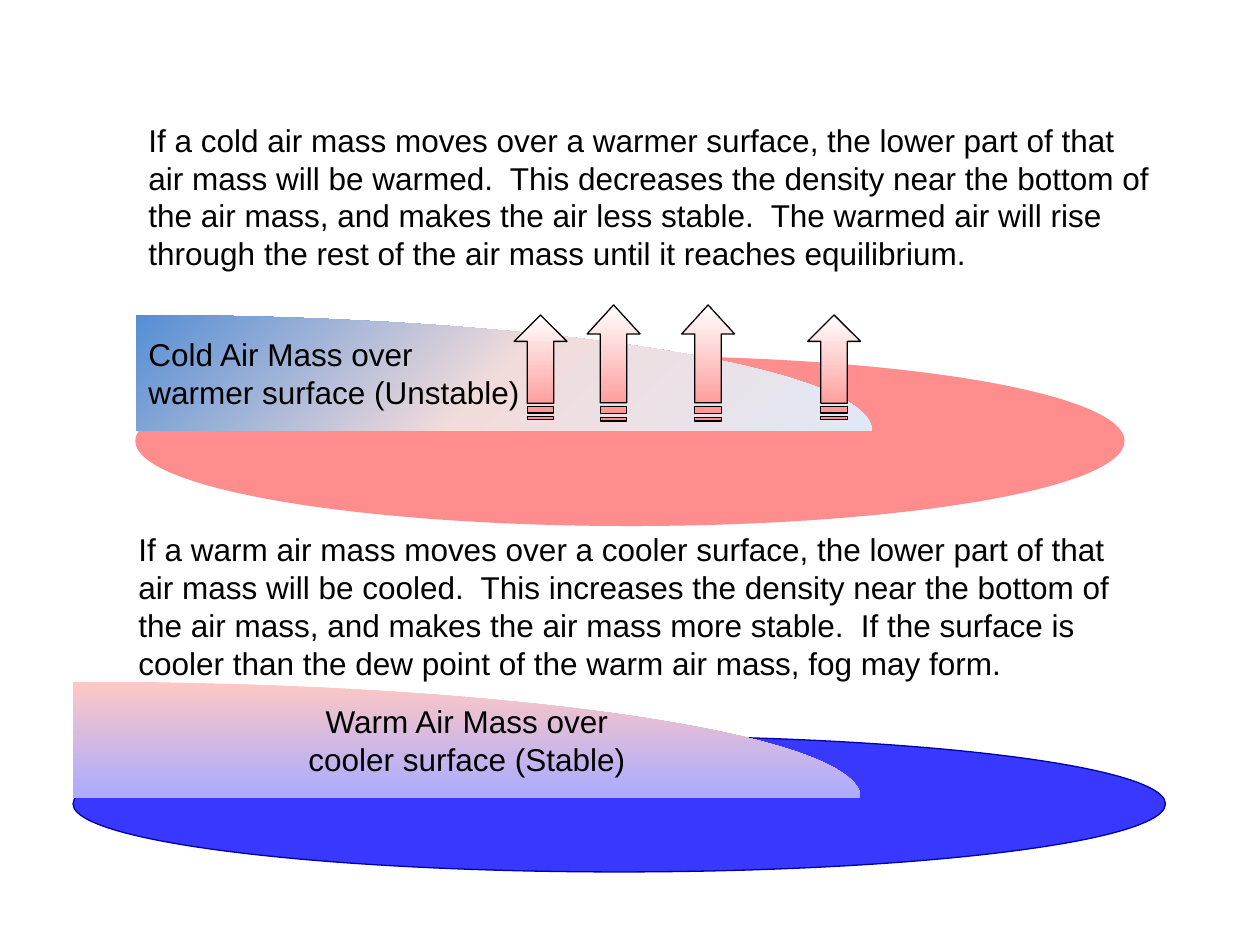
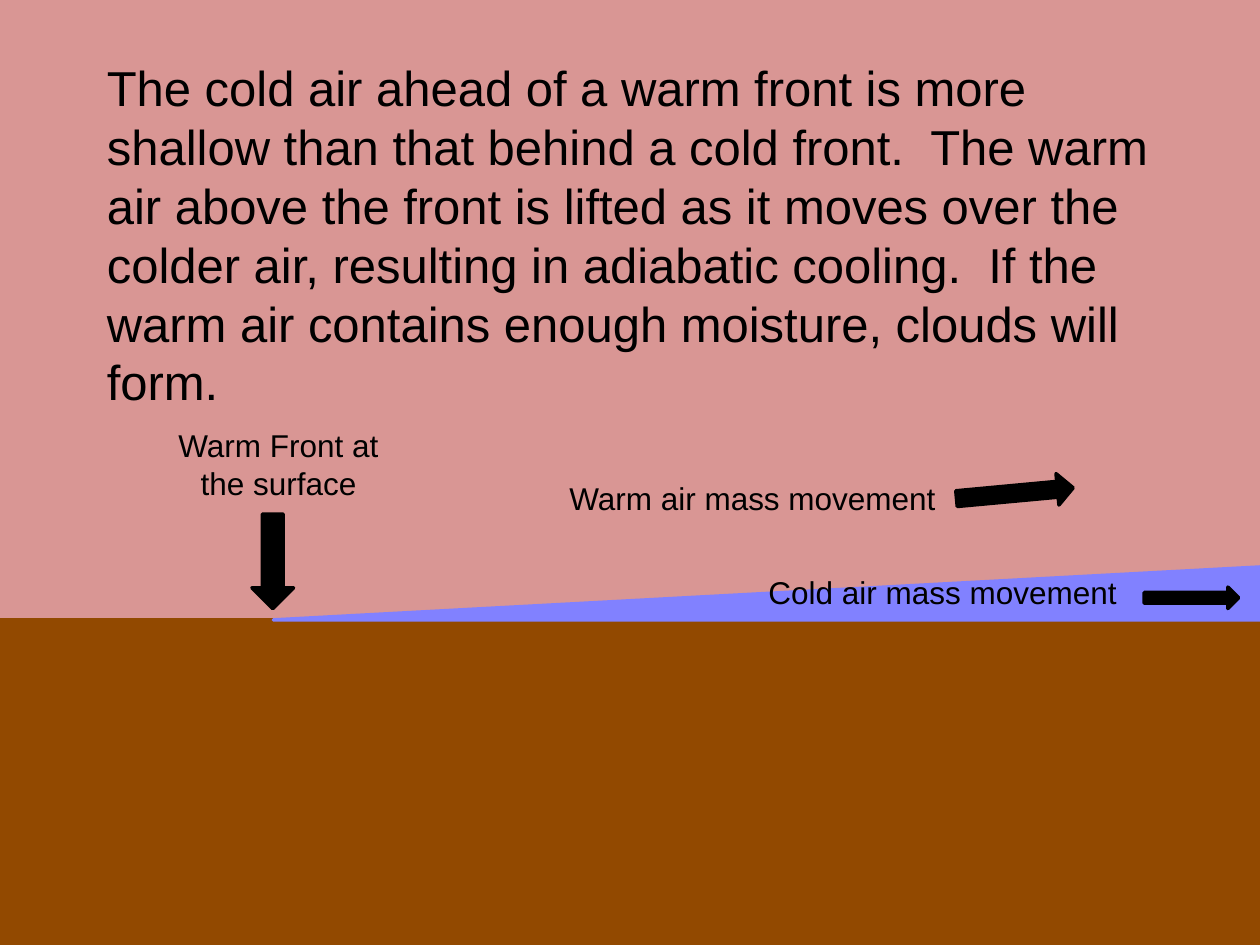
import math
from dataclasses import dataclass

import pptx
import pptx.dml.color
import pptx.enum.shapes
import pptx.enum.text
import pptx.oxml
import pptx.oxml.ns
import pptx.presentation
import pptx.shapes.autoshape
import pptx.slide
import pptx.text.text
import pptx.util

Inches = pptx.util.Inches
Pt = pptx.util.Pt
Preset = pptx.enum.shapes.MSO_SHAPE
Align = pptx.enum.text.PP_ALIGN
qn = pptx.oxml.ns.qn

FONT = "Arial"
COLORS = {
    "ink": "000000",
    "white": "FFFFFF",
    "warm_surface": "FF8D8D",
    "cool_surface": "3838FF",
    "cool_surface_edge": "0000A8",
    "warm_air_top": "FEC8C4",
    "warm_air_base": "ABABFF",
    "cold_air_deep": "558ED5",
    "cold_air_mid": "F2DCDB",
    "cold_air_edge": "E1E8F5",
    "warm_sky": "D99694",
    "ground": "924900",
    "cold_wedge": "8181FF",
}


@dataclass(frozen=True)
class Box:
    left: float
    top: float
    width: float
    height: float

    def emu(self) -> tuple:
        return tuple(Inches(v) for v in (self.left, self.top, self.width, self.height))


@dataclass(frozen=True)
class Caption:
    box: Box
    text: str
    size: float = 18
    align: Align = Align.LEFT
    wrap: bool = True


@dataclass(frozen=True)
class Solid:
    preset: Preset
    box: Box
    fill: str
    edge: str
    weight: float = 2
    rotation: float = 0
    flipped: bool = False


@dataclass(frozen=True)
class AirMass:
    box: Box
    stops: tuple
    angle: float
    lines: tuple
    align: Align


@dataclass(frozen=True)
class Updraft:
    center: float
    top: float
    length: float
    head: float


def rgb(name: str) -> pptx.dml.color.RGBColor:
    return pptx.dml.color.RGBColor.from_string(COLORS[name])


def write(paragraph: pptx.text.text._Paragraph, text: str, size: float, align: Align) -> None:
    paragraph.alignment = align
    run = paragraph.add_run()
    run.text = text
    run.font.name = FONT
    run.font.size = Pt(size)
    run.font.color.rgb = rgb("ink")


def add_caption(slide: pptx.slide.Slide, caption: Caption) -> None:
    frame = slide.shapes.add_textbox(*caption.box.emu()).text_frame
    frame.word_wrap = caption.wrap
    frame.auto_size = pptx.enum.text.MSO_AUTO_SIZE.SHAPE_TO_FIT_TEXT
    write(frame.paragraphs[0], caption.text, caption.size, caption.align)


def set_edge(shape: pptx.shapes.autoshape.Shape, color: str, weight: float) -> None:
    shape.shadow.inherit = False
    shape.line.color.rgb = rgb(color)
    shape.line.width = Pt(weight)


def add_solid(slide: pptx.slide.Slide, solid: Solid) -> None:
    shape = slide.shapes.add_shape(solid.preset, *solid.box.emu())
    shape.fill.solid()
    shape.fill.fore_color.rgb = rgb(solid.fill)
    set_edge(shape, solid.edge, solid.weight)
    shape.rotation = solid.rotation
    if solid.flipped:
        shape._element.spPr.find(qn("a:xfrm")).set("flipH", "1")


def set_gradient(shape: pptx.shapes.autoshape.Shape, stops: tuple, angle: float) -> None:
    shape.fill.gradient()
    shape.fill.gradient_angle = -angle % 360
    stop_list = shape._element.spPr.find(qn("a:gradFill")).find(qn("a:gsLst"))
    for old_stop in list(stop_list):
        stop_list.remove(old_stop)
    for index, name in enumerate(stops):
        position = 100000 * index // (len(stops) - 1)
        stop_list.append(pptx.oxml.parse_xml(
            f'<a:gs {pptx.oxml.ns.nsdecls("a")} pos="{position}">'
            f'<a:srgbClr val="{COLORS[name]}"/></a:gs>'))


def add_air_mass(slide: pptx.slide.Slide, mass: AirMass, steps: int = 90) -> None:
    left, top, width, height = mass.box.emu()
    base = top + height
    turns = [math.pi / 2 * step / steps for step in range(steps + 1)]
    rim = [(left + width * math.sin(t), base - height * math.cos(t)) for t in turns]
    outline = slide.shapes.build_freeform(left, base)
    outline.add_line_segments(rim, close=True)
    shape = outline.convert_to_shape()
    shape.shadow.inherit = False
    shape.line.fill.background()
    set_gradient(shape, mass.stops, mass.angle)
    frame = shape.text_frame
    frame.word_wrap = True
    frame.vertical_anchor = pptx.enum.text.MSO_ANCHOR.MIDDLE
    for index, line in enumerate(mass.lines):
        paragraph = frame.add_paragraph() if index else frame.paragraphs[0]
        write(paragraph, line, 18, mass.align)


def add_updraft(slide: pptx.slide.Slide, updraft: Updraft, breadth: float = 0.42) -> None:
    base = updraft.top + updraft.length
    neck = updraft.top + updraft.head
    half, shaft = breadth / 2, breadth / 4

    def stripe_edge(share: int) -> float:
        return base - updraft.length * share / 32

    arrow = [(0, updraft.top), (half, neck), (shaft, neck), (shaft, stripe_edge(5)),
             (-shaft, stripe_edge(5)), (-shaft, neck), (-half, neck)]
    stripes = [
        [(-shaft, stripe_edge(upper)), (shaft, stripe_edge(upper)),
         (shaft, stripe_edge(lower)), (-shaft, stripe_edge(lower))]
        for upper, lower in ((4, 2), (1, 0))
    ]
    outline = slide.shapes.build_freeform(Inches(updraft.center), Inches(updraft.top))
    for contour in (arrow, *stripes):
        points = [(Inches(updraft.center + x), Inches(y)) for x, y in contour]
        if contour is not arrow:
            outline.move_to(*points[0])
        outline.add_line_segments(points[1:], close=True)
    shape = outline.convert_to_shape()
    set_edge(shape, "ink", 0.75)
    set_gradient(shape, ("white", "warm_surface"), 90)


def new_slide(deck: pptx.presentation.Presentation, background: str) -> pptx.slide.Slide:
    slide = deck.slides.add_slide(deck.slide_layouts[6])
    slide.background.fill.solid()
    slide.background.fill.fore_color.rgb = rgb(background)
    return slide


def build_stability(deck: pptx.presentation.Presentation) -> None:
    slide = new_slide(deck, "white")
    add_caption(slide, Caption(
        Box(1, 4.16, 8.18, 1.31),
        "If a warm air mass moves over a cooler surface, the lower part of that air mass "
        "will be cooled.  This increases the density near the bottom of the air mass, and "
        "makes the air mass more stable.  If the surface is cooler than the dew point of "
        "the warm air mass, fog may form."))
    add_caption(slide, Caption(
        Box(1.08, 0.91, 8.18, 1.31),
        "If a cold air mass moves over a warmer surface, the lower part of that air mass "
        "will be warmed.  This decreases the density near the bottom of the air mass, and "
        "makes the air less stable.  The warmed air will rise through the rest of the air "
        "mass until it reaches equilibrium."))
    add_solid(slide, Solid(Preset.OVAL, Box(0.58, 5.84, 8.67, 1.08),
                           "cool_surface", "cool_surface_edge", 0.75))
    add_air_mass(slide, AirMass(
        Box(0.58, 5.41, 6.25, 0.92), ("warm_air_top", "warm_air_base"), 90,
        ("Warm Air Mass over", "cooler surface (Stable)"), Align.CENTER))
    add_solid(slide, Solid(Preset.OVAL, Box(1.08, 2.83, 7.84, 1.34),
                           "warm_surface", "warm_surface", 0.75))
    add_air_mass(slide, AirMass(
        Box(1.08, 2.5, 5.84, 0.92), ("cold_air_deep", "cold_air_mid", "cold_air_edge"), 45,
        ("Cold Air Mass over", "warmer surface (Unstable)"), Align.LEFT))
    for updraft in (
        Updraft(4.29, 2.5, 0.83, 0.21),
        Updraft(4.87, 2.42, 0.92, 0.23),
        Updraft(5.62, 2.42, 0.92, 0.23),
        Updraft(6.62, 2.5, 0.83, 0.21),
    ):
        add_updraft(slide, updraft)


def build_warm_front(deck: pptx.presentation.Presentation) -> None:
    slide = new_slide(deck, "warm_sky")
    for solid in (
        Solid(Preset.RECTANGLE, Box(0, 4.92, 10, 2.58), "ground", "ground"),
        Solid(Preset.RIGHT_TRIANGLE, Box(2.17, 4.5, 7.83, 0.42),
              "cold_wedge", "cold_wedge", flipped=True),
        Solid(Preset.DOWN_ARROW, Box(2, 4.08, 0.33, 0.75), "ink", "ink"),
        Solid(Preset.RIGHT_ARROW, Box(9.08, 4.66, 0.75, 0.17), "ink", "ink"),
        Solid(Preset.RIGHT_ARROW, Box(7.59, 3.79, 0.93, 0.25), "ink", "ink", rotation=354.7),
    ):
        add_solid(slide, solid)
    for caption in (
        Caption(Box(1.25, 3.33, 1.92, 0.71), "Warm Front at the surface", align=Align.CENTER),
        Caption(Box(6, 4.5, 3, 0.4), "Cold air mass movement"),
        Caption(
            Box(0.75, 0.41, 8.67, 2.93),
            "The cold air ahead of a warm front is more shallow than that behind a cold "
            "front.  The warm air above the front is lifted as it moves over the colder air, "
            "resulting in adiabatic cooling.  If the warm air contains enough moisture, "
            "clouds will form.", size=28),
        Caption(Box(4.42, 3.75, 3.14, 0.4), "Warm air mass movement", wrap=False),
    ):
        add_caption(slide, caption)


def main() -> None:
    deck = pptx.Presentation()
    deck.slide_width = Inches(10)
    deck.slide_height = Inches(7.5)
    build_stability(deck)
    build_warm_front(deck)
    deck.save("out.pptx")


if __name__ == "__main__":
    main()
